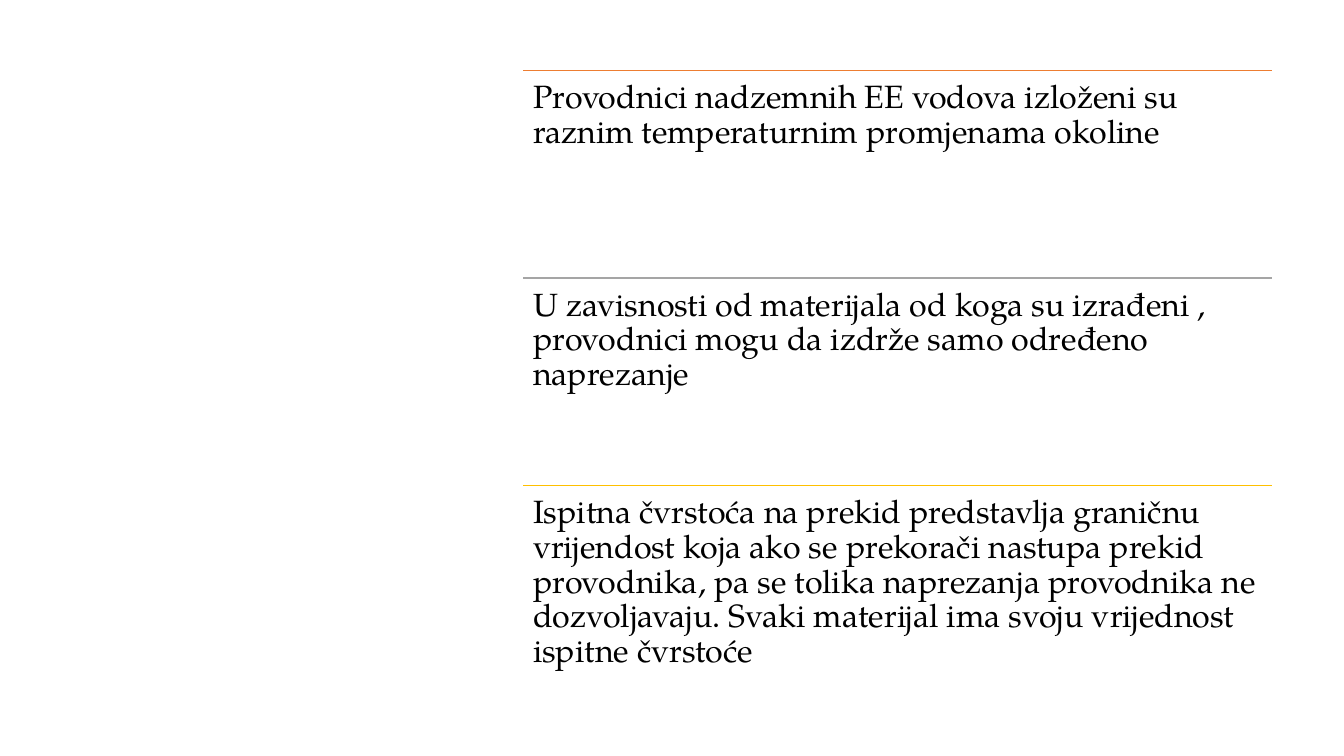
"""Slide on conductor stress: three statements, each under a coloured rule."""
from pptx import Presentation, util as u
from pptx.dml.color import RGBColor
from pptx.enum import shapes, text
from pptx.oxml.ns import qn
from lxml import etree

STATEMENTS = [
    ("ED7D31", "Provodnici nadzemnih EE vodova izloženi su raznim "
               "temperaturnim promjenama okoline"),
    ("A5A5A5", "U zavisnosti od materijala od koga su izrađeni , provodnici "
               "mogu da izdrže samo određeno naprezanje"),
    ("FFC000", "Ispitna čvrstoća na prekid predstavlja graničnu vrijendost "
               "koja ako se prekorači nastupa prekid provodnika, pa se tolika "
               "naprezanja provodnika ne dozvoljavaju. Svaki materijal ima "
               "svoju vrijednost ispitne čvrstoće"),
]
FONT, SIZE, INK = "TeX Gyre Pagella", 23, "000000"
LEFT, TOP, WIDTH, ROW = 373.7, 50.4, 535, 148.3
INSET = 7.2


def colour(value):
    return RGBColor.from_string(value)


def add_rule(s, y, value):
    line = s.shapes.add_connector(shapes.MSO_CONNECTOR.STRAIGHT, u.Pt(LEFT),
                                  u.Pt(y), u.Pt(LEFT + WIDTH), u.Pt(y))
    line.line.color.rgb = colour(value)
    line.line.width = u.Pt(1)
    etree.SubElement(line._element.spPr, qn("a:effectLst"))


def add_statement(s, y, words):
    sp = s.shapes.add_textbox(u.Pt(LEFT), u.Pt(y), u.Pt(WIDTH), u.Pt(ROW))
    tf = sp.text_frame
    tf.word_wrap = True
    tf.vertical_anchor = text.MSO_ANCHOR.TOP
    tf.margin_left = tf.margin_right = u.Pt(INSET)
    tf.margin_top = tf.margin_bottom = u.Pt(INSET)
    p = tf.paragraphs[0]
    p.line_spacing = 0.9
    r = p.add_run()
    r.text = words
    r.font.name = FONT
    r.font.size = u.Pt(SIZE)
    r.font.color.rgb = colour(INK)


def main():
    prs = Presentation()
    prs.slide_width, prs.slide_height = u.Pt(960), u.Pt(540)
    s = prs.slides.add_slide(prs.slide_layouts[6])
    for i, (value, words) in enumerate(STATEMENTS):
        y = TOP + i * ROW
        add_rule(s, y, value)
        add_statement(s, y, words)
    prs.save("out.pptx")


if __name__ == "__main__":
    main()
